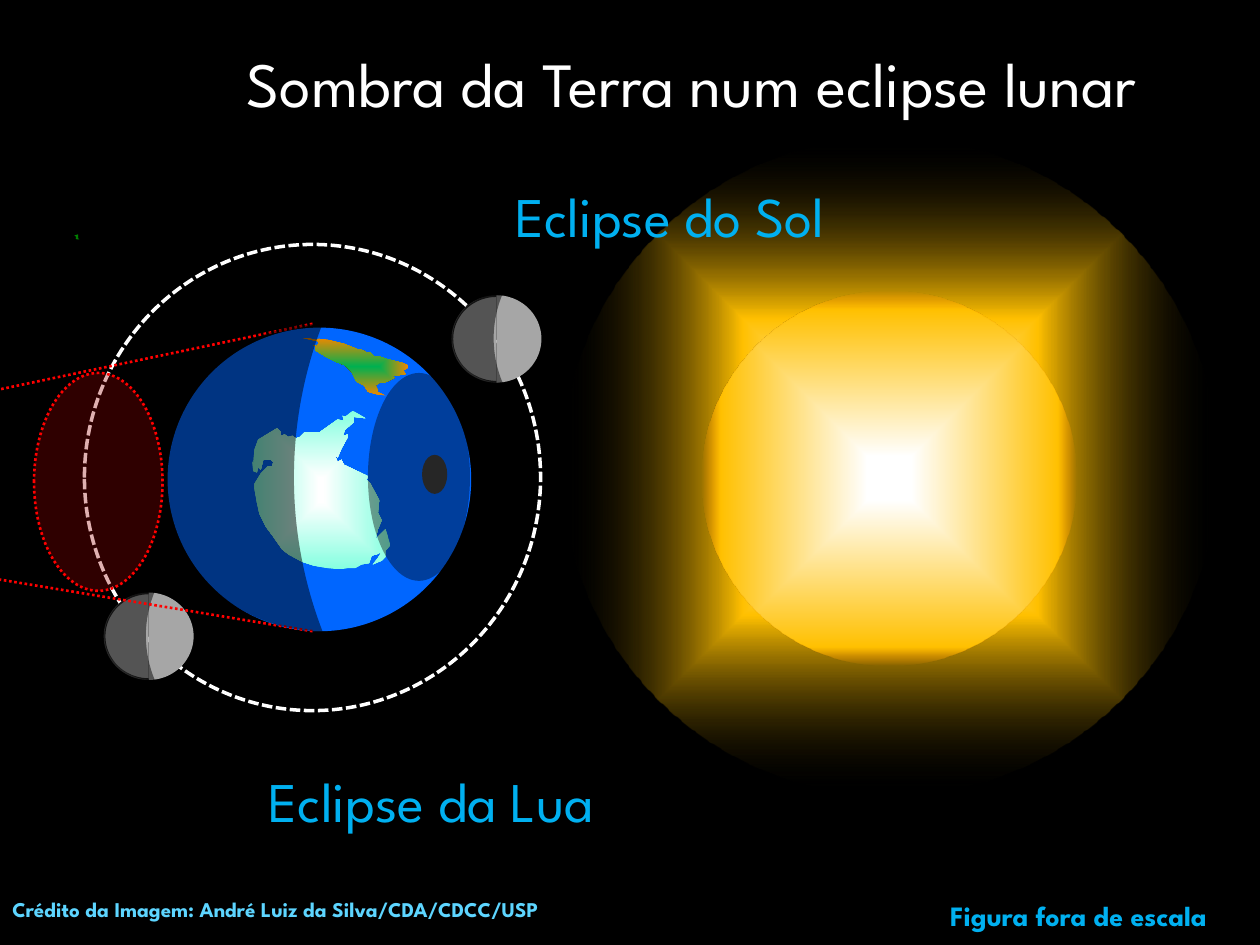
from math import cos, pi, sin

from lxml.etree import SubElement
from pptx import Presentation
from pptx.dml.color import RGBColor
from pptx.enum.dml import MSO_LINE
from pptx.enum.shapes import MSO_CONNECTOR, MSO_SHAPE
from pptx.enum.text import MSO_ANCHOR, PP_ALIGN
from pptx.oxml import parse_xml
from pptx.oxml.ns import nsdecls, qn
from pptx.util import Inches, Pt

SOUTH_AMERICA = [
    (2.39, 2.68), (2.53, 2.71), (2.52, 2.75), (2.49, 2.74), (2.51, 2.75), (2.5, 2.78),
    (2.6, 2.84), (2.66, 2.87), (2.74, 2.9), (2.79, 2.95), (2.83, 3.03), (2.89, 3.06),
    (2.92, 3.11), (2.99, 3.13), (3.06, 3.14), (2.99, 3.11), (3, 3.1), (2.98, 3.06),
    (3.01, 3.04), (3.06, 3.04), (3.02, 3.02), (3.07, 3.03), (3.13, 3), (3.1, 2.99),
    (3.15, 2.98), (3.22, 2.97), (3.2, 2.94), (3.24, 2.92), (3.24, 2.9), (3.19, 2.88),
    (3.07, 2.85), (3.01, 2.83), (2.97, 2.83), (2.94, 2.8), (2.91, 2.8), (2.88, 2.78),
    (2.83, 2.77), (2.73, 2.73), (2.61, 2.7), (2.53, 2.69), (2.51, 2.7), (2.43, 2.68),
]
ANTARCTICA = [
    (2.76, 4.51), (2.82, 4.51), (2.87, 4.48), (2.93, 4.47), (2.95, 4.41), (2.99, 4.4),
    (3.03, 4.38), (3, 4.43), (2.96, 4.48), (3.03, 4.45), (3.06, 4.42), (3.06, 4.37),
    (3.1, 4.33), (3.06, 4.2), (2.98, 4.28), (3, 4.2), (3.03, 4.13), (3, 4.07),
    (3.01, 3.97), (2.94, 3.84), (2.91, 3.81), (2.92, 3.78), (2.73, 3.69), (2.71, 3.65),
    (2.68, 3.67), (2.66, 3.62), (2.68, 3.63), (2.71, 3.56), (2.76, 3.47), (2.76, 3.45),
    (2.72, 3.46), (2.74, 3.41), (2.81, 3.35), (2.81, 3.31), (2.9, 3.32), (2.8, 3.26),
    (2.74, 3.31), (2.72, 3.3), (2.73, 3.34), (2.68, 3.33), (2.54, 3.43), (2.48, 3.43),
    (2.42, 3.43), (2.38, 3.47), (2.35, 3.48), (2.32, 3.46), (2.29, 3.47), (2.26, 3.45),
    (2.23, 3.46), (2.23, 3.43), (2.2, 3.4), (2.05, 3.49), (2.02, 3.57), (2.01, 3.68),
    (2, 3.66), (2.01, 3.74), (2.04, 3.75), (2.05, 3.71), (2.07, 3.73), (2.09, 3.65),
    (2.15, 3.65), (2.17, 3.67), (2.16, 3.7), (2.13, 3.7), (2.07, 3.76), (2.02, 3.84),
    (2.02, 3.88), (2.04, 3.99), (2.06, 4.08), (2.11, 4.18), (2.17, 4.26), (2.24, 4.36),
    (2.29, 4.4), (2.4, 4.46), (2.49, 4.49), (2.6, 4.51), (2.7, 4.52),
]
ISLETS = [
    [(0.6, 1.89), (0.61, 1.9), (0.63, 1.9), (0.61, 1.88)],
    [(0.59, 1.87), (0.62, 1.89), (0.62, 1.86)],
]


def color(hex_text):
    return RGBColor.from_string(hex_text)


def write(tf, text, size=16, fill="00B0F0", bold=False, align=PP_ALIGN.CENTER, before=0):
    p = tf.paragraphs[0]
    p.alignment = align
    p.space_before = Pt(before)
    r = p.add_run()
    r.text = text
    r.font.name = "League Spartan"
    r.font.size = Pt(size)
    r.font.bold = bold
    r.font.color.rgb = color(fill)


class EclipseSlide:
    def __init__(self, prs):
        self.s = prs.slides.add_slide(prs.slide_layouts[5])
        self.s.background.fill.solid()
        self.s.background.fill.fore_color.rgb = color("000000")

    def stroke(self, line, hex_text, width, dash=None):
        line.color.rgb = color(hex_text)
        line.width = Pt(width)
        if dash:
            line.dash_style = dash

    def style(self, sp, fill=None, alpha=100, line=None):
        """Fill with a hex colour or a list of (position, colour, alpha) stops."""
        sp.shadow.inherit = False
        if isinstance(fill, list):
            stops = "".join(
                f'<a:gs pos="{pos * 1000}"><a:srgbClr val="{c}">'
                f'<a:alpha val="{a * 1000}"/></a:srgbClr></a:gs>' for pos, c, a in fill)
            sp._element.spPr.insert(2, parse_xml(
                f'<a:gradFill {nsdecls("a")} rotWithShape="1"><a:gsLst>{stops}</a:gsLst>'
                '<a:path path="shape"><a:fillToRect l="50000" t="50000" r="50000" b="50000"/>'
                '</a:path></a:gradFill>'))
        elif fill:
            sp.fill.solid()
            sp.fill.fore_color.rgb = color(fill)
            if alpha < 100:
                rgb = sp._element.spPr.find(qn("a:solidFill"))[0]
                SubElement(rgb, qn("a:alpha"), val=str(alpha * 1000))
        else:
            sp.fill.background()
        if line:
            self.stroke(sp.line, *line)
        else:
            sp.line.fill.background()
        return sp

    def preset(self, kind, box, adjust=(), **fmt):
        sp = self.s.shapes.add_shape(kind, *map(Inches, box))
        for i, value in enumerate(adjust):
            sp.adjustments[i] = value
        return self.style(sp, **fmt)

    def ellipse(self, *box, **fmt):
        return self.preset(MSO_SHAPE.OVAL, box, **fmt)

    def night(self, *box):
        """Crescent that darkens the side away from the Sun."""
        self.preset(MSO_SHAPE.MOON, box, [0.82], fill="000000", alpha=49)

    def outline(self, points, close=True, **fmt):
        start, *rest = [(Inches(x), Inches(y)) for x, y in points]
        builder = self.s.shapes.build_freeform(*start)
        builder.add_line_segments(rest, close=close)
        self.style(builder.convert_to_shape(), **fmt)

    def moon(self, cx, cy):
        for side, edge in ((1, "A6A6A6"), (-1, "262626")):
            angles = [pi * (i / 40 - 0.5) for i in range(41)]
            arc = [(cx + side * 0.35 * cos(a), cy + 0.34 * sin(a)) for a in angles]
            self.outline(arc, close=False, fill="A6A6A6", line=(edge, 1))
        self.night(cx - 0.35, cy - 0.36, 0.4, 0.71)

    def callout(self, text, box, adjust):
        sp = self.preset(MSO_SHAPE.LINE_CALLOUT_1, box, adjust)
        tf = sp.text_frame
        tf.vertical_anchor = MSO_ANCHOR.MIDDLE
        tf.margin_bottom = Inches(0.12)
        write(tf, text, size=32)

    def title(self, text):
        sp = self.s.shapes.title
        sp.left, sp.top, sp.width, sp.height = map(Inches, (0, 0.3, 10, 1.25))
        tf = sp.text_frame
        tf.vertical_anchor = MSO_ANCHOR.TOP
        tf.margin_left = Inches(1.08)
        write(tf, text, size=36, fill="FFFFFF", before=7.2)

    def label(self, text, box, left=0.1, right=0.1, **fmt):
        tf = self.s.shapes.add_textbox(*map(Inches, box)).text_frame
        tf.word_wrap = True
        tf.margin_left, tf.margin_right = Inches(left), Inches(right)
        write(tf, text, bold=True, **fmt)

    def ray(self, *ends):
        c = self.s.shapes.add_connector(MSO_CONNECTOR.STRAIGHT, *map(Inches, ends))
        self.stroke(c.line, "FF0000", 1.5, MSO_LINE.ROUND_DOT)
        SubElement(c._element.spPr, qn("a:effectLst"))


def main():
    prs = Presentation()
    prs.slide_width, prs.slide_height = Inches(10), Inches(7.5)
    s = EclipseSlide(prs)

    # Sun: glow and disc
    s.ellipse(4.46, 1.09, 5.2, 5.22,
              fill=[(7, "FFFFFF", 100), (45, "FFC000", 100), (100, "000000", 0)])
    s.ellipse(5.57, 2.31, 2.97, 2.97,
              fill=[(12, "FFFFFF", 100), (90, "FFC000", 100), (100, "EE8800", 0)])

    # Orbit, Moon in lunar eclipse and Earth
    s.ellipse(0.67, 1.94, 3.62, 3.7, line=("FFFFFF", 2, MSO_LINE.SQUARE_DOT))
    s.moon(1.18, 5.05)
    s.ellipse(1.33, 2.6, 2.41, 2.41, fill="0066FF")
    s.outline(SOUTH_AMERICA, fill=[(0, "00B050", 100), (100, "EE8800", 100)])
    s.outline(ANTARCTICA, fill=[(3, "FFFFFF", 100), (100, "85FFE0", 100)])
    for islet in ISLETS:
        s.outline(islet, fill="008000")

    # Shadows cast on Earth and by Earth
    s.ellipse(2.92, 2.96, 0.81, 1.65, fill="000000", alpha=39)
    s.ellipse(3.35, 3.61, 0.2, 0.31, fill="262626")
    s.ellipse(0.27, 2.96, 1.02, 1.73, fill="9A0000", alpha=31,
              line=("FF0000", 1.5, MSO_LINE.ROUND_DOT))

    s.callout("Eclipse do Sol", (3.35, 1.39, 3.94, 0.71), (1.03, 0.5, 2.6, 0.02))
    s.callout("Eclipse da Lua", (1.38, 6.03, 4.09, 0.71), (-0.03, 0.5, -3.09, -0.19))
    s.title("Sombra da Terra num eclipse lunar")
    s.ray(2.48, 2.57, 0, 3.09)
    s.ray(2.48, 5.01, 0, 4.6)
    s.label("Figura fora de escala", (7.45, 7.08, 2.52, 0.37), left=0, right=0.3)
    s.night(1.3, 2.57, 1.26, 2.44)
    s.moon(3.94, 2.69)
    s.label("Crédito da Imagem: André Luiz da Silva/CDA/CDCC/USP", (0, 7.07, 5.24, 0.3),
            size=12, fill="5DD5FF", align=PP_ALIGN.LEFT)
    prs.save("out.pptx")


if __name__ == "__main__":
    main()
